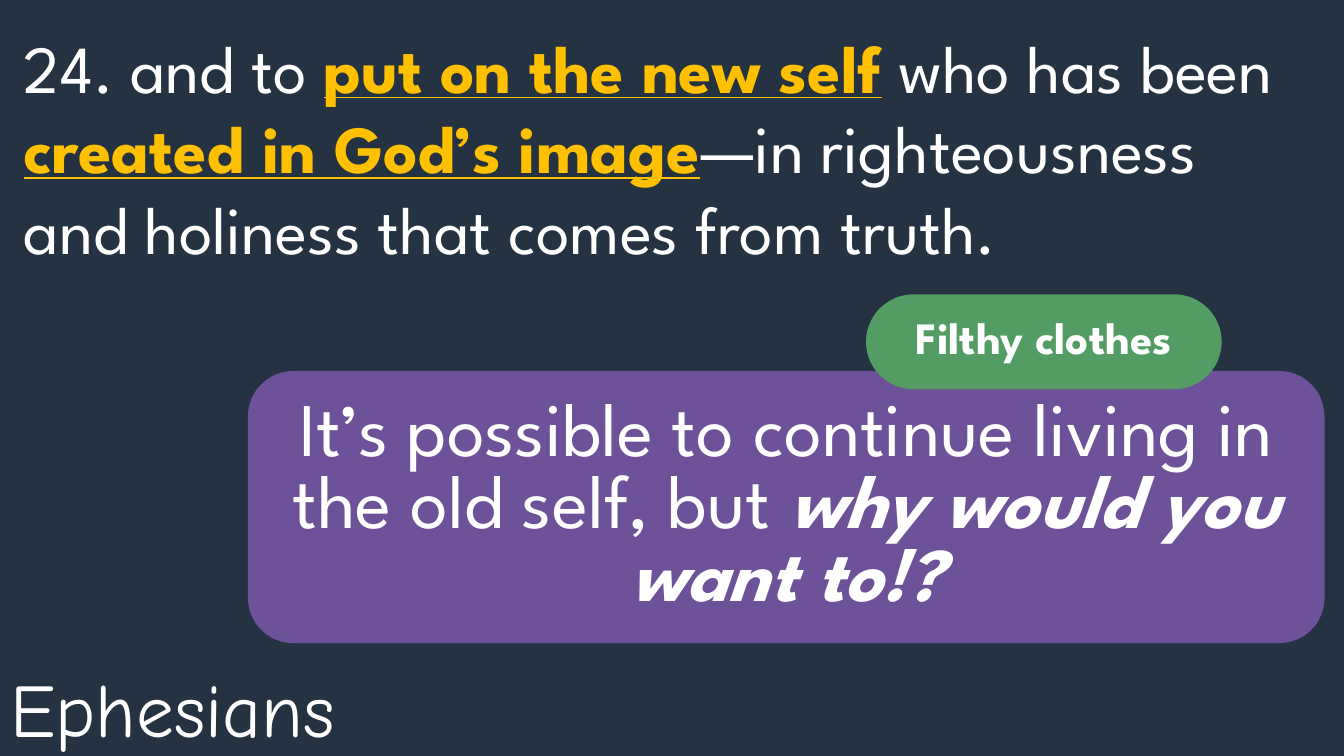
import pptx
import pptx.dml.color
import pptx.enum.shapes
import pptx.enum.text
import pptx.util

Pt = pptx.util.Pt
ALIGN = pptx.enum.text.PP_ALIGN
ANCHOR = pptx.enum.text.MSO_ANCHOR
WHITE, GOLD = "FFFFFF", "FFC000"
NAVY, PURPLE, GREEN = "243241", "6E5299", "539D64"


def paint(fill, color):
    """Give a fill one solid colour."""
    fill.solid()
    fill.fore_color.rgb = pptx.dml.color.RGBColor.from_string(color)


def write(frame, runs, size, name="League Spartan", align=ALIGN.LEFT,
          anchor=ANCHOR.TOP, spacing=1.0):
    """Write one paragraph from (text, colour, style letters) runs."""
    frame.word_wrap = True
    frame.auto_size = pptx.enum.text.MSO_AUTO_SIZE.NONE
    frame.vertical_anchor = anchor
    para = frame.paragraphs[0]
    para.alignment = align
    para.line_spacing = spacing
    para.space_before = Pt(0)
    for text, color, style in runs:
        span = para.add_run()
        span.text = text
        span.font.name = name
        span.font.size = Pt(size)
        span.font.bold = "b" in style
        span.font.italic = "i" in style
        span.font.underline = "u" in style
        paint(span.font.fill, color)


def add_book_title(page, left, top, width, height):
    """Place the book name in the title placeholder."""
    title = page.shapes.title
    title.left, title.top = Pt(left), Pt(top)
    title.width, title.height = Pt(width), Pt(height)
    write(title.text_frame, [("Ephesians", WHITE, "")], 54, "Comic Neue")


def add_verse(page, left, top, width, height):
    """Place the verse with its key phrases in gold."""
    box = page.shapes.add_textbox(Pt(left), Pt(top), Pt(width), Pt(height))
    write(box.text_frame, [
        ("24. and to ", WHITE, ""),
        ("put on the new self", GOLD, "bu"),
        (" who has been ", WHITE, ""),
        ("created in God’s image", GOLD, "bu"),
        ("—in righteousness and holiness that comes from truth.", WHITE, ""),
    ], 48)


def add_panel(page, left, top, width, height, color, rounding, runs, size):
    """Place a rounded panel with centred text."""
    kind = pptx.enum.shapes.MSO_SHAPE.ROUNDED_RECTANGLE
    panel = page.shapes.add_shape(kind, Pt(left), Pt(top), Pt(width), Pt(height))
    panel.adjustments[0] = rounding
    panel.shadow.inherit = False
    paint(panel.fill, color)
    panel.line.fill.background()
    write(panel.text_frame, runs, size, align=ALIGN.CENTER,
          anchor=ANCHOR.MIDDLE, spacing=0.8)


def add_callout(page, left, top, width, height):
    """Place the question panel and the label overlapping its top edge."""
    add_panel(page, left, top, width, height, PURPLE, 0.1667, [
        ("It’s possible to continue living in the old self, but ", WHITE, ""),
        ("why would you want to!?", WHITE, "bi"),
    ], 54)
    add_panel(page, left + 441.5, top - 54.7, 254, 67.7, GREEN, 0.5,
              [("Filthy clothes", WHITE, "b")], 32)


def main():
    """Build and save the slide."""
    deck = pptx.Presentation()
    deck.slide_width, deck.slide_height = Pt(960), Pt(540)
    page = deck.slides.add_slide(deck.slide_layouts.get_by_name("Title Only"))
    paint(page.background.fill, NAVY)
    add_book_title(page, 0, 469.4, 280, 72.7)
    add_verse(page, 10, 15, 936, 240)
    add_callout(page, 177.1, 265, 769, 194.4)
    deck.save("out.pptx")


if __name__ == "__main__":
    main()
